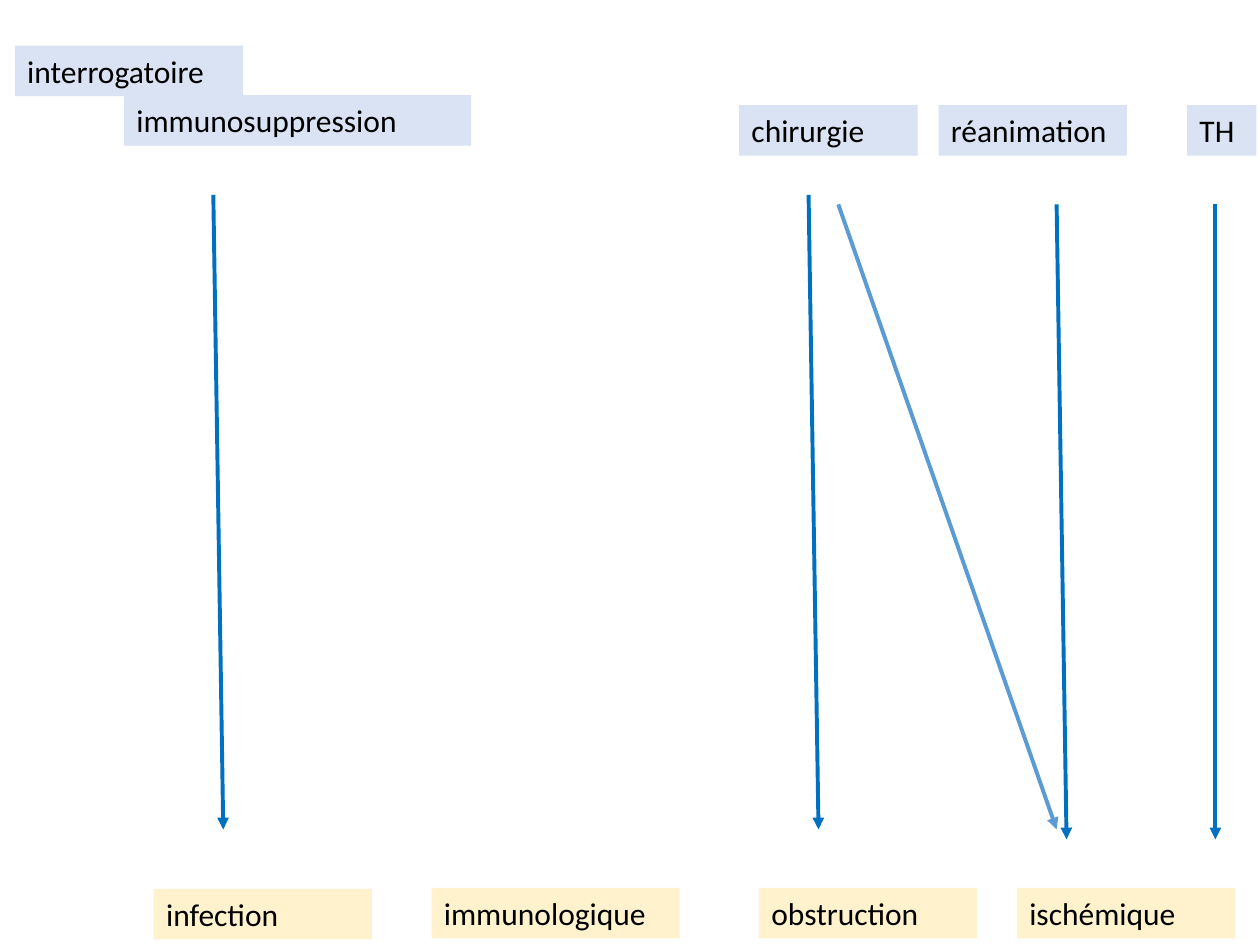
"""Build the slide linking patient contexts to mechanisms of complication."""
from lxml import etree
from pptx import Presentation
from pptx.dml.color import RGBColor
from pptx.enum.shapes import MSO_CONNECTOR
from pptx.enum.text import MSO_AUTO_SIZE
from pptx.oxml.ns import qn
from pptx.util import Cm, Pt

STRAIGHT = MSO_CONNECTOR.STRAIGHT
FIT_SHAPE = MSO_AUTO_SIZE.SHAPE_TO_FIT_TEXT
PALE_BLUE = RGBColor(0xDA, 0xE3, 0xF3)
CREAM = RGBColor(0xFF, 0xF2, 0xCC)
BLUE = RGBColor(0x00, 0x70, 0xC0)
LIGHT_BLUE = RGBColor(0x5B, 0x9B, 0xD5)
BLACK = RGBColor(0x00, 0x00, 0x00)

FRAME_FORMAT = {"word_wrap": True, "auto_size": FIT_SHAPE}
FONT_FORMAT = {"name": "Calibri", "size": Pt(18)}
LABEL_HEIGHT = 1.02

contexts = [
    ("interrogatoire", 0.3, 0.92, 4.6),
    ("immunosuppression", 2.5, 1.92, 7),
    ("chirurgie", 14.9, 2.12, 3.6),
    ("réanimation", 18.92, 2.12, 3.8),
    ("TH", 23.93, 2.12, 1.4),
]
mechanisms = [
    ("infection", 3.1, 17.92, 4.4),
    ("immunologique", 8.7, 17.9, 5),
    ("obstruction", 15.3, 17.9, 4.4),
    ("ischémique", 20.5, 17.9, 4.4),
]
arrows = [
    (4.3, 3.93, 4.5, 16.72, BLUE),
    (21.3, 4.12, 21.5, 16.92, BLUE),
    (24.5, 4.12, 24.5, 16.92, BLUE),
    (16.3, 3.93, 16.5, 16.72, BLUE),
    (16.9, 4.12, 21.3, 16.72, LIGHT_BLUE),
]

prs = Presentation()
prs.slide_width, prs.slide_height = Cm(25.4), Cm(19.05)
s = prs.slides.add_slide(prs.slide_layouts[6])

for labels, fill in ((contexts, PALE_BLUE), (mechanisms, CREAM)):
    for text, left, top, width in labels:
        sp = s.shapes.add_textbox(Cm(left), Cm(top), Cm(width), Cm(LABEL_HEIGHT))
        sp.fill.solid()
        sp.fill.fore_color.rgb = fill
        tf = sp.text_frame
        for key, value in FRAME_FORMAT.items():
            setattr(tf, key, value)
        r = tf.paragraphs[0].add_run()
        r.text = text
        for key, value in FONT_FORMAT.items():
            setattr(r.font, key, value)
        r.font.color.rgb = BLACK

for x1, y1, x2, y2, color in arrows:
    sp = s.shapes.add_connector(STRAIGHT, Cm(x1), Cm(y1), Cm(x2), Cm(y2))
    sp.line.color.rgb = color
    sp.line.width = Pt(2.25)
    ln = sp.line._get_or_add_ln()
    etree.SubElement(ln, qn("a:tailEnd"), type="triangle")
    etree.SubElement(sp._element.spPr, qn("a:effectLst"))

prs.save("out.pptx")
